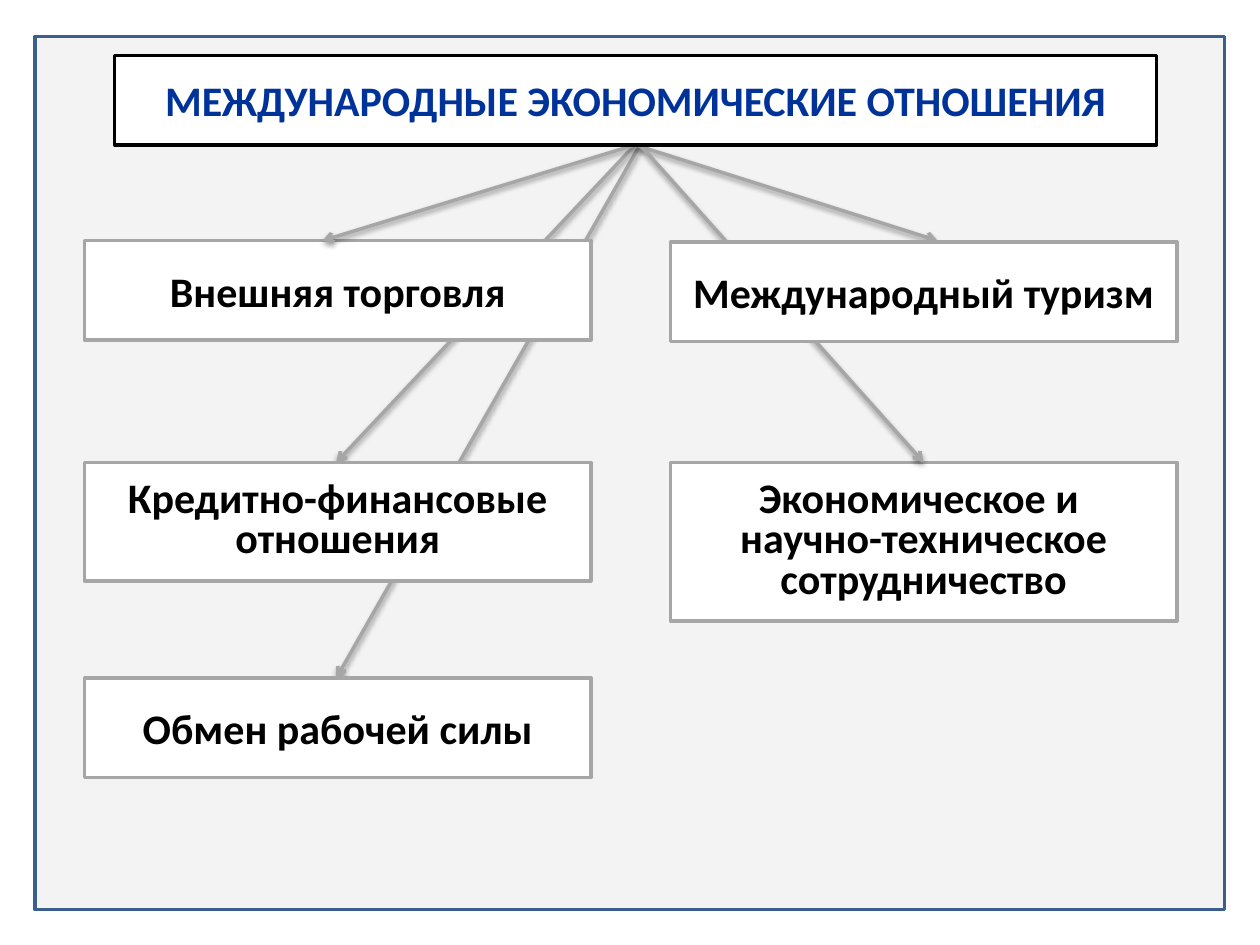
from lxml import etree
from pptx import Presentation
from pptx.dml.color import RGBColor
from pptx.enum.shapes import MSO_CONNECTOR as Connector, MSO_SHAPE as Shape
from pptx.enum.text import MSO_ANCHOR as Anchor, MSO_AUTO_SIZE as AutoSize, PP_ALIGN as Align
from pptx.oxml import parse_xml
from pptx.oxml.ns import nsdecls, qn
from pptx.util import Inches, Pt

WHITE = RGBColor(0xFF, 0xFF, 0xFF)
BLACK = RGBColor(0x00, 0x00, 0x00)
GRAY = RGBColor(0xA6, 0xA6, 0xA6)
PANEL_FILL = RGBColor(0xF2, 0xF2, 0xF2)
PANEL_LINE = RGBColor(0x3A, 0x5F, 0x8C)
TITLE_BLUE = RGBColor(0x00, 0x33, 0x99)

LEFT, RIGHT = 0.67, 5.32
BOX_WIDTH, BOX_HEIGHT = 4.02, 0.79
ROWS = (1.91, 3.67, 5.38)
TITLE_BOTTOM = 1.15

ARROW_SHADOW = f"""<a:effectLst {nsdecls('a')}>
  <a:outerShdw blurRad="39370" dist="20320" dir="5400000" rotWithShape="0">
    <a:srgbClr val="000000"><a:alpha val="38000"/></a:srgbClr>
  </a:outerShdw>
</a:effectLst>"""


def paint(shape, fill, line):
    shape.fill.solid()
    shape.fill.fore_color.rgb = fill
    shape.line.color.rgb = line
    shape.line.width = Pt(2)


def write_text(shape, lines, color=BLACK, spacing=None):
    frame = shape.text_frame
    frame.word_wrap = True
    frame.auto_size = AutoSize.NONE
    frame.vertical_anchor = Anchor.MIDDLE
    frame.text = "\n".join(lines)
    font_format = {"name": "Calibri", "size": Pt(24), "bold": True}
    for paragraph in frame.paragraphs:
        paragraph.alignment = Align.CENTER
        paragraph.line_spacing = spacing
        for name, value in font_format.items():
            setattr(paragraph.font, name, value)
        paragraph.font.color.rgb = color


def add_rectangle(slide, left, top, width, height, fill, line):
    shape = slide.shapes.add_shape(
        Shape.RECTANGLE, Inches(left), Inches(top), Inches(width), Inches(height))
    shape.shadow.inherit = False
    paint(shape, fill, line)
    return shape


def add_panel(slide):
    panel = add_rectangle(slide, 0.28, 0.29, 9.44, 6.93, PANEL_FILL, PANEL_LINE)
    color = panel.fill._xPr.find(qn("a:solidFill"))[0]
    etree.SubElement(color, qn("a:alpha")).set("val", "90000")


def add_box(slide, left, top, *lines, height=BOX_HEIGHT, spacing=None):
    box = add_rectangle(slide, left, top, BOX_WIDTH, height, WHITE, GRAY)
    write_text(box, lines, spacing=spacing)


def add_arrow(slide, start_x, end_x, end_y):
    arrow = slide.shapes.add_connector(
        Connector.STRAIGHT, Inches(start_x), Inches(TITLE_BOTTOM),
        Inches(end_x), Inches(end_y))
    arrow.line.color.rgb = GRAY
    arrow.line.width = Pt(2)
    etree.SubElement(arrow.line._get_or_add_ln(), qn("a:tailEnd")).set("type", "arrow")
    arrow._element.spPr.append(parse_xml(ARROW_SHADOW))


def set_title(slide, text):
    title = slide.shapes.title
    place = {"left": 0.91, "top": 0.44, "width": 8.27, "height": 0.71}
    for name, value in place.items():
        setattr(title, name, Inches(value))
    paint(title, WHITE, BLACK)
    write_text(title, [text], TITLE_BLUE)
    # Bring the title in front of the panel and the arrows
    slide.shapes._spTree.append(title._element)


def main():
    presentation = Presentation()
    presentation.slide_width, presentation.slide_height = Inches(10), Inches(7.5)
    slide = presentation.slides.add_slide(presentation.slide_layouts[5])
    top, middle, bottom = ROWS

    add_panel(slide)

    # Arrows that pass behind the boxes
    add_arrow(slide, 5.08, 2.67, bottom)
    add_arrow(slide, 5.04, 2.67, middle)

    # Forms of economic relations
    add_box(slide, LEFT, top, "Внешняя торговля")
    add_box(slide, LEFT, middle, "Кредитно-финансовые отношения", height=0.94, spacing=0.8)
    add_box(slide, LEFT, bottom, "Обмен рабочей силы")
    add_box(slide, RIGHT, middle, "Экономическое и ", "научно-техническое сотрудничество",
            height=1.26, spacing=0.8)

    # Arrows in front, except where the tourism box covers them
    add_arrow(slide, 5.04, 7.44, top)
    add_arrow(slide, 5.04, 2.56, top)
    add_arrow(slide, 5.08, 7.33, middle)
    add_box(slide, RIGHT, top + 0.01, "Международный туризм")

    set_title(slide, "МЕЖДУНАРОДНЫЕ ЭКОНОМИЧЕСКИЕ ОТНОШЕНИЯ")
    presentation.save("out.pptx")


if __name__ == "__main__":
    main()
